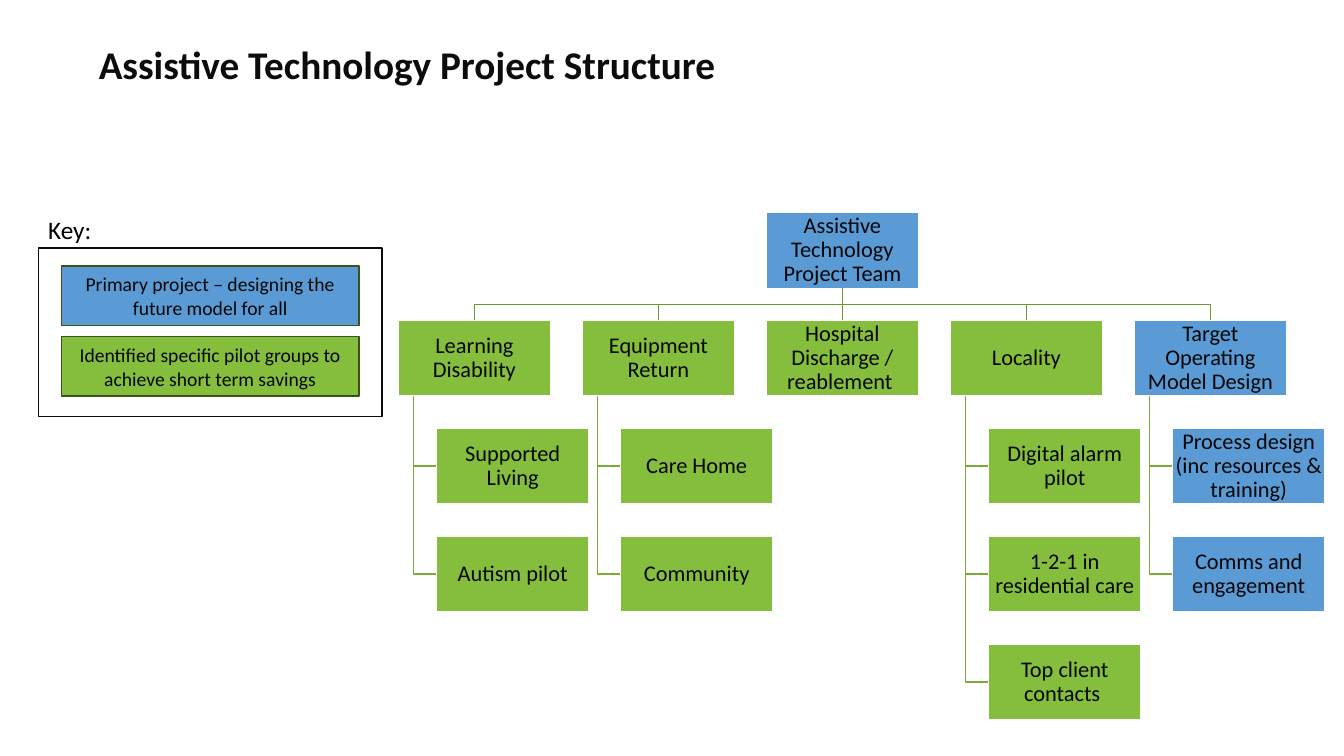
from pptx import Presentation
from pptx.dml.color import RGBColor
from pptx.enum.shapes import MSO_SHAPE
from pptx.enum.text import MSO_ANCHOR, MSO_AUTO_SIZE, PP_ALIGN
from pptx.util import Pt

RECTANGLE = MSO_SHAPE.RECTANGLE
TOP, MIDDLE = MSO_ANCHOR.TOP, MSO_ANCHOR.MIDDLE
LEFT, CENTER = PP_ALIGN.LEFT, PP_ALIGN.CENTER

BLUE = RGBColor(0x5B, 0x9B, 0xD5)
GREEN = RGBColor(0x85, 0xBE, 0x3D)
WHITE = RGBColor(0xFF, 0xFF, 0xFF)
BLACK = RGBColor(0, 0, 0)
INK = RGBColor(0x06, 0x06, 0x06)
TITLE_INK = RGBColor(0x0C, 0x0C, 0x0C)
KEY_EDGE = RGBColor(0x3A, 0x53, 0x1B)
TEAM_LINE = RGBColor(0x6B, 0x98, 0x31)
TASK_LINE = RGBColor(0x79, 0xAC, 0x37)

TITLE = "Assistive Technology Project Structure"
KEY_LABEL = "Key:"
KEY = [
    ("Primary project – designing the future model for all", BLUE),
    ("Identified specific pilot groups to achieve short term savings", GREEN),
]
TEAM = "Assistive Technology Project Team"
BRANCHES = [
    ("Learning Disability", GREEN, ["Supported Living", "Autism pilot"]),
    ("Equipment Return", GREEN, ["Care Home", "Community"]),
    ("Hospital Discharge / reablement ", GREEN, []),
    ("Locality", GREEN,
     ["Digital alarm pilot", "1-2-1 in residential care", "Top client contacts "]),
    ("Target Operating Model Design", BLUE,
     ["Process design (inc resources & training)", "Comms and engagement"]),
]

# Lengths in px, 100 to the inch
EMU_PER_PX = 9144
PAGE_WIDTH, PAGE_HEIGHT = 1333, 750
BOX_WIDTH, BOX_HEIGHT = 151, 75
FIRST_LEFT, LAST_LEFT = 395, 1125
TEAM_TOP, ROW_PITCH = 211, 107
TASK_INDENT, STEM_INDENT = 38, 15
KEY_TOP, KEY_PITCH = 264, 70


def px(length):
    return round(length * EMU_PER_PX)


def write(frame, text, size, color, align=CENTER, anchor=MIDDLE, bold=False, spacing=None):
    frame.word_wrap = True
    frame.auto_size = MSO_AUTO_SIZE.NONE
    frame.vertical_anchor = anchor
    para = frame.paragraphs[0]
    para.alignment = align
    para.line_spacing = spacing
    span = para.add_run()
    span.text = text
    span.font.name = "Calibri"
    span.font.size = Pt(size)
    span.font.bold = bold
    span.font.color.rgb = color


def add_box(page, left, top, width, height, fill, edge):
    box = page.shapes.add_shape(RECTANGLE, px(left), px(top), px(width), px(height))
    box.shadow.inherit = False
    if fill is None:
        box.fill.background()
    else:
        box.fill.solid()
        box.fill.fore_color.rgb = fill
    box.line.color.rgb = edge
    box.line.width = Pt(1)
    return box


def add_chart_box(page, text, left, top, fill):
    box = add_box(page, left, top, BOX_WIDTH, BOX_HEIGHT, fill, WHITE)
    frame = box.text_frame
    frame.margin_left = frame.margin_right = px(1)
    frame.margin_top = frame.margin_bottom = px(1)
    write(frame, text, 16, INK, spacing=0.9)


def add_elbow(page, points, color):
    """Draw an unfilled line through the given px points."""
    start, *rest = [(px(x), px(y)) for x, y in points]
    builder = page.shapes.build_freeform(*start)
    builder.add_line_segments(rest, close=False)
    elbow = builder.convert_to_shape()
    elbow.shadow.inherit = False
    elbow.fill.background()
    elbow.line.color.rgb = color
    elbow.line.width = Pt(1)


def add_key(page):
    label = page.shapes.add_textbox(px(38), px(208), px(112), px(40))
    write(label.text_frame, KEY_LABEL, 18, BLACK, LEFT, TOP)
    for row, (text, fill) in enumerate(KEY):
        box = add_box(page, 61, KEY_TOP + row * KEY_PITCH, 295, 59, fill, KEY_EDGE)
        write(box.text_frame, text, 14, INK)
    add_box(page, 38, 246, 341, 167, None, TITLE_INK)


def add_structure(page):
    team_left = (FIRST_LEFT + LAST_LEFT) / 2
    team_middle = team_left + BOX_WIDTH / 2
    team_bottom = TEAM_TOP + BOX_HEIGHT
    branch_top = TEAM_TOP + ROW_PITCH
    branch_bottom = branch_top + BOX_HEIGHT
    bus = (team_bottom + branch_top) / 2
    pitch = (LAST_LEFT - FIRST_LEFT) / (len(BRANCHES) - 1)

    add_chart_box(page, TEAM, team_left, TEAM_TOP, BLUE)
    for column, (name, fill, tasks) in enumerate(BRANCHES):
        left = FIRST_LEFT + column * pitch
        middle = left + BOX_WIDTH / 2
        add_elbow(page, [(team_middle, team_bottom), (team_middle, bus),
                         (middle, bus), (middle, branch_top)], TEAM_LINE)
        add_chart_box(page, name, left, branch_top, fill)
        stem, task_left = left + STEM_INDENT, left + TASK_INDENT
        for row, task in enumerate(tasks, start=1):
            task_top = branch_top + row * ROW_PITCH
            task_middle = task_top + BOX_HEIGHT / 2
            add_elbow(page, [(stem, branch_bottom), (stem, task_middle),
                             (task_left, task_middle)], TASK_LINE)
            add_chart_box(page, task, task_left, task_top, fill)


def main():
    deck = Presentation()
    deck.slide_width, deck.slide_height = px(PAGE_WIDTH), px(PAGE_HEIGHT)
    page = deck.slides.add_slide(deck.slide_layouts.get_by_name("Title Only"))
    title = page.shapes.title
    title.left, title.top, title.width, title.height = px(88), px(40), px(912), px(98)
    write(title.text_frame, TITLE, 28, TITLE_INK, LEFT, TOP, bold=True, spacing=0.9)
    add_key(page)
    add_structure(page)
    deck.save("out.pptx")


if __name__ == "__main__":
    main()
